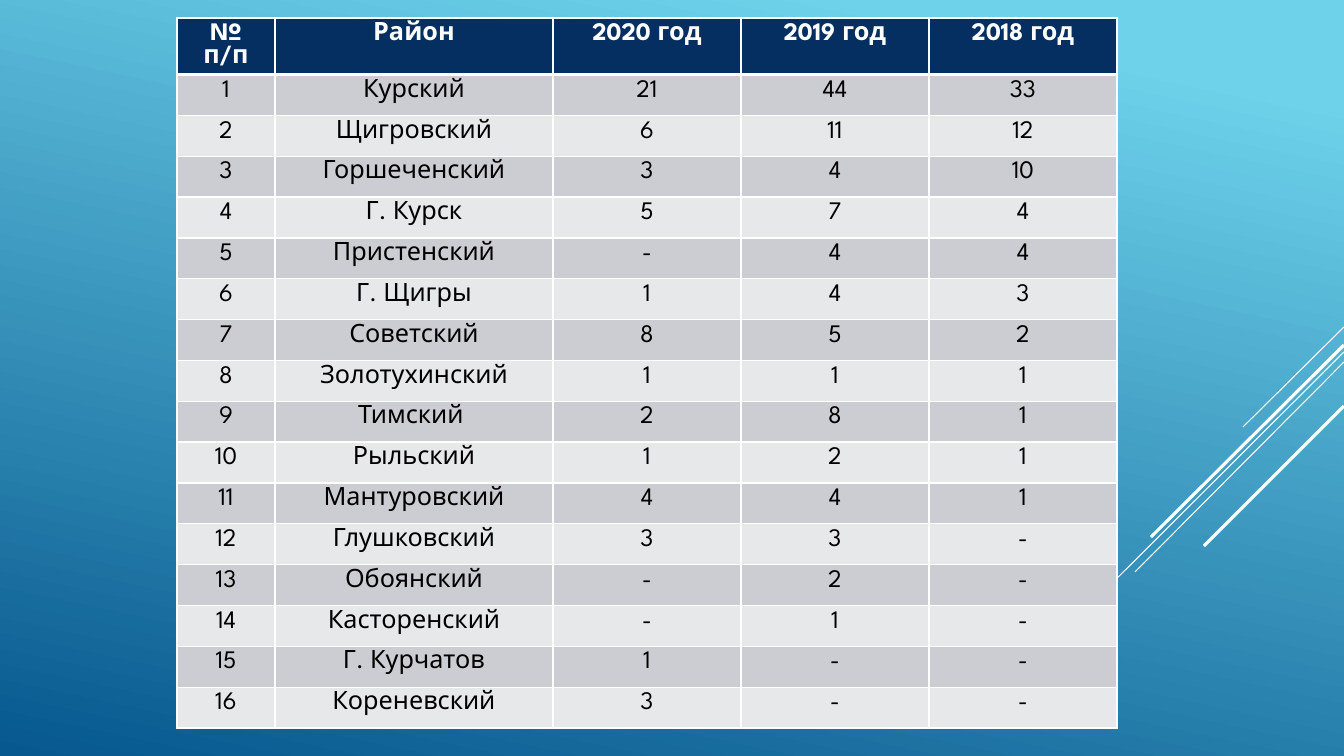
import pptx
import pptx.util
import pptx.dml.color
import pptx.enum.shapes
import pptx.enum.text
import pptx.oxml.ns
import lxml.etree

PX = 914400 / 100.8
RGB = pptx.dml.color.RGBColor
WHITE = RGB(0xFF, 0xFF, 0xFF)
BLACK = RGB(0x00, 0x00, 0x00)
NAVY = RGB(0x05, 0x2F, 0x61)
GREY = RGB(0xCC, 0xCD, 0xD2)
PALE = RGB(0xE7, 0xE8, 0xEA)
SKY = RGB(0x6E, 0xD2, 0xEB)
DEEP = RGB(0x06, 0x58, 0x8E)
FONT = "League Spartan"


def px(size):
    return pptx.util.Emu(round(size * PX))


def add_edge(cell, side, width):
    props = cell._tc.get_or_add_tcPr()
    edge = lxml.etree.SubElement(props, pptx.oxml.ns.qn("a:ln" + side), w=str(pptx.util.Pt(width)))
    fill = lxml.etree.SubElement(edge, pptx.oxml.ns.qn("a:solidFill"))
    lxml.etree.SubElement(fill, pptx.oxml.ns.qn("a:srgbClr"), val=str(WHITE))


deck = pptx.Presentation()
deck.slide_width = px(1344)
deck.slide_height = px(756)
slide = deck.slides.add_slide(deck.slide_layouts[6])

back = slide.background.fill
back.gradient()
back.gradient_angle = 258
for stop, place, color in zip(back.gradient_stops, (0.1, 1), (SKY, DEEP)):
    stop.position = place
    stop.color.rgb = color

lines = [
    (327, 1243, 427, 0.75),
    (352, 1015, 680, 0.75),
    (362, 1135, 572, 0.75),
    (345, 1151, 537, 2.25),
    (406, 1204, 546, 2.25),
]
for top, left, base, width in lines:
    line = slide.shapes.add_connector(
        pptx.enum.shapes.MSO_CONNECTOR.STRAIGHT, px(1344), px(top), px(left), px(base))
    line.line.color.rgb = WHITE
    line.line.width = pptx.util.Pt(width)
    lxml.etree.SubElement(line._element.spPr, pptx.oxml.ns.qn("a:effectLst"))

heads = ("№ п/п", "Район", "2020 год", "2019 год", "2018 год")
areas = [
    ("Курский", "21", "44", "33"),
    ("Щигровский", "6", "11", "12"),
    ("Горшеченский", "3", "4", "10"),
    ("Г. Курск", "5", "7", "4"),
    ("Пристенский", "-", "4", "4"),
    ("Г. Щигры", "1", "4", "3"),
    ("Советский", "8", "5", "2"),
    ("Золотухинский", "1", "1", "1"),
    ("Тимский ", "2", "8", "1"),
    ("Рыльский", "1", "2", "1"),
    ("Мантуровский", "4", "4", "1"),
    ("Глушковский", "3", "3", "-"),
    ("Обоянский", "-", "2", "-"),
    ("Касторенский", "-", "1", "-"),
    ("Г. Курчатов", "1", "-", "-"),
    ("Кореневский", "3", "-", "-"),
]
rows = [heads] + [(str(num), *area) for num, area in enumerate(areas, 1)]
widths = (98, 278, 188, 188, 188)
head_high = 56
body_high = 654

table = slide.shapes.add_table(
    len(rows), len(heads), px(177), px(18), px(sum(widths)), px(head_high + body_high)).table
for col, width in zip(table.columns, widths):
    col.width = px(width)

for r, row in enumerate(rows):
    table.rows[r].height = px(body_high / len(areas) if r else head_high)
    for c, text in enumerate(row):
        cell = table.cell(r, c)
        add_edge(cell, "L", 1)
        add_edge(cell, "R", 1)
        add_edge(cell, "T", 3 if r == 1 else 1)
        add_edge(cell, "B", 3 if r == 0 else 1)
        cell.fill.solid()
        cell.fill.fore_color.rgb = NAVY if r == 0 else GREY if r % 2 else PALE
        cell.text_frame.text = text
        para = cell.text_frame.paragraphs[0]
        para.alignment = pptx.enum.text.PP_ALIGN.CENTER
        font = para.runs[0].font
        font.name = FONT
        font.size = pptx.util.Pt(18)
        font.bold = r == 0
        font.color.rgb = BLACK if r else WHITE

deck.save("out.pptx")
